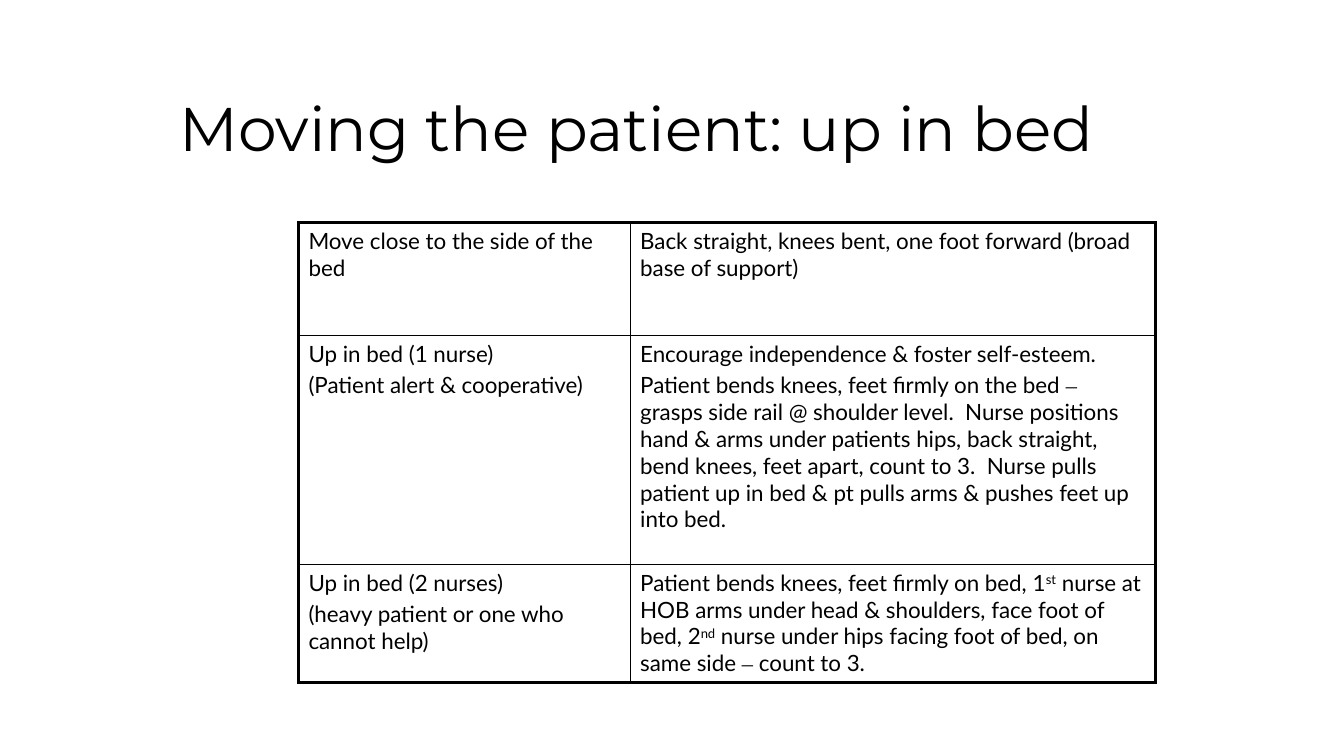
from lxml.etree import SubElement
from pptx import Presentation
from pptx.dml.color import RGBColor as Color
from pptx.enum.text import MSO_ANCHOR as Anchor
from pptx.oxml.ns import qn
from pptx.util import Inches, Pt

COLORS = {"ink": "000000", "paper": "FFFFFF"}
DASH = "–"
ORDINALS = ("st", "nd")

STEPS = [
    (
        [["Move close to the side of the bed"]],
        [["Back straight, knees bent, one foot forward (broad base of support)"]],
    ),
    (
        [["Up in bed (1 nurse)"], ["(Patient alert & cooperative)"]],
        [
            ["Encourage independence & foster self-esteem."],
            [
                "Patient bends knees, feet firmly on the bed ", DASH,
                " grasps side rail @ shoulder level.  Nurse positions hand & arms "
                "under patients hips, back straight, bend knees, feet apart, count "
                "to 3.  Nurse pulls patient up in bed & pt pulls arms & pushes feet "
                "up into bed.",
            ],
        ],
    ),
    (
        [["Up in bed (2 nurses)"], ["(heavy patient or one who cannot help)"]],
        [
            [
                "Patient bends knees, feet firmly on bed, 1", "st",
                " nurse at HOB arms under head & shoulders, face foot of bed, 2", "nd",
                " nurse under hips facing foot of bed, on same side ", DASH,
                " count to 3.",
            ],
        ],
    ),
]


class SlideBuilder:
    """Draws styled elements on one slide."""

    def __init__(self, slide):
        self.slide = slide
        self.ink = Color.from_string(COLORS["ink"])
        self.body_font = "Lato"
        self.title_font = "Montserrat"
        self.dash_font = "Times New Roman"
        fill = slide.background.fill
        fill.solid()
        fill.fore_color.rgb = Color.from_string(COLORS["paper"])

    def style(self, para, font_name, size):
        para.font.name = font_name
        para.font.size = Pt(size)
        para.font.color.rgb = self.ink

    def title(self, text, left, top, width, height):
        box = self.slide.shapes.add_textbox(
            Inches(left), Inches(top), Inches(width), Inches(height)
        )
        frame = box.text_frame
        frame.word_wrap = True
        frame.vertical_anchor = Anchor.MIDDLE
        para = frame.paragraphs[0]
        para.text = text
        para.line_spacing = 0.9
        self.style(para, self.title_font, 44)

    def cell_text(self, frame, paragraphs):
        for index, parts in enumerate(paragraphs):
            para = frame.add_paragraph() if index else frame.paragraphs[0]
            if index:
                para.space_before = Pt(3.2)
            self.style(para, self.body_font, 16)
            for part in parts:
                span = para.add_run()
                span.text = part
                if part == DASH:
                    span.font.name = self.dash_font
                elif part in ORDINALS:
                    span._r.get_or_add_rPr().set("baseline", "30000")

    def borders(self, cell, outer_sides):
        properties = cell._tc.get_or_add_tcPr()
        for side, is_outer in outer_sides.items():
            width = Pt(2.25 if is_outer else 1)
            line = SubElement(properties, qn(f"a:ln{side}"), w=str(width))
            fill = SubElement(line, qn("a:solidFill"))
            SubElement(fill, qn("a:srgbClr"), val=COLORS["ink"])

    def table(self, rows, left, top, widths, heights):
        table = self.slide.shapes.add_table(
            len(heights), len(widths), Inches(left), Inches(top),
            Inches(sum(widths)), Inches(sum(heights)),
        ).table
        table.first_row = False
        table.horz_banding = False
        for column, width in zip(table.columns, widths):
            column.width = Inches(width)
        for row, height in zip(table.rows, heights):
            row.height = Inches(height)
        for r, row in enumerate(rows):
            for c, paragraphs in enumerate(row):
                cell = table.cell(r, c)
                self.cell_text(cell.text_frame, paragraphs)
                self.borders(cell, {
                    "L": c == 0,
                    "R": c == len(widths) - 1,
                    "T": r == 0,
                    "B": r == len(heights) - 1,
                })
                cell.fill.background()


def main():
    deck = Presentation()
    deck.slide_width = Inches(13.33)
    deck.slide_height = Inches(7.5)
    page = SlideBuilder(deck.slides.add_slide(deck.slide_layouts[6]))
    page.title("Moving the patient: up in bed", 1.68, 0.68, 11.36, 1.25)
    page.table(STEPS, 2.96, 2.21, widths=(3.29, 5.21), heights=(1.12, 2.27, 1.17))
    deck.save("out.pptx")


if __name__ == "__main__":
    main()
